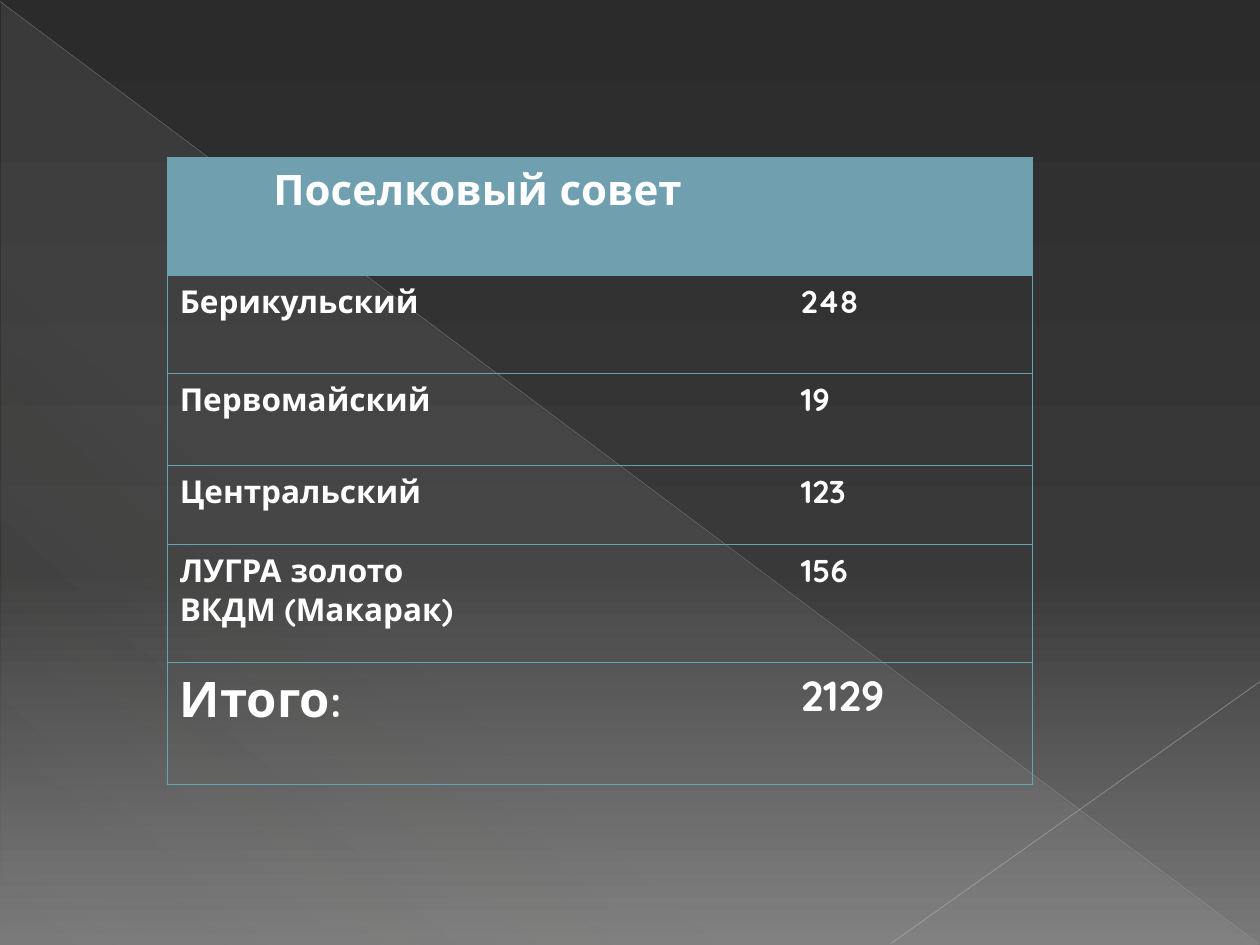
from lxml import etree
from pptx import Presentation
from pptx.dml.color import RGBColor
from pptx.enum.shapes import MSO_CONNECTOR, MSO_SHAPE
from pptx.enum.text import PP_ALIGN
from pptx.oxml import parse_xml
from pptx.oxml.ns import qn
from pptx.util import Cm, Pt

LINE = MSO_CONNECTOR.STRAIGHT
TRIANGLE = MSO_SHAPE.RIGHT_TRIANGLE
CENTER = PP_ALIGN.CENTER

WHITE = RGBColor(0xFF, 0xFF, 0xFF)
TEAL = RGBColor(0x67, 0xA3, 0xB7)
HEAD = RGBColor(0x70, 0xA0, 0xB0)
DARK = RGBColor(0x2B, 0x2B, 0x2B)
COAL = RGBColor(0x39, 0x39, 0x39)
GRAY = RGBColor(0x79, 0x79, 0x79)
SAND = RGBColor(0xD4, 0xD2, 0xD0)
SILVER = RGBColor(0xB7, 0xB7, 0xB7)
PALE = RGBColor(0xBF, 0xBF, 0xBF)

FONT = "Quicksand"
NS = 'xmlns:a="http://schemas.openxmlformats.org/drawingml/2006/main"'
PLAIN = "{2D5ABB26-0587-4C30-8999-92F81FD0307C}"  # table style without grid

COLS = (12.52, 4.93)
# row height, label runs with sizes, value, value size
ROWS = (
    (2.38, [("Поселковый совет", 24)], "", 24),
    (1.98, [("Берикульский", 18)], "248", 18),
    (1.85, [("Первомайский", 18)], "19", 18),
    (1.6, [("Центральский", 18)], "123", 18),
    (2.38, [("ЛУГРА золото\nВКДМ (Макарак)", 18)], "156", 18),
    (2.45, [("Итого", 28), (":", 24)], "2129", 24),
)


def shade(parent, stops, angle):
    """Swap the parent's solid fill for a gradient of (place, colour, alpha)."""
    marks = "".join(
        f'<a:gs pos="{place * 1000}"><a:srgbClr val="{color}">'
        f'<a:alpha val="{alpha * 1000}"/></a:srgbClr></a:gs>'
        for place, color, alpha in stops)
    grad = parse_xml(
        f'<a:gradFill {NS} rotWithShape="1"><a:gsLst>{marks}</a:gsLst>'
        f'<a:lin ang="{angle * 60000}" scaled="0"/></a:gradFill>')
    parent.replace(parent.find(qn("a:solidFill")), grad)


def add_line(slide, start, end, color, width, alpha):
    line = slide.shapes.add_connector(LINE, *map(Cm, start + end))
    line.line.color.rgb = color
    line.line.width = Pt(width)
    props = line._element.spPr
    tint = props.find(".//" + qn("a:srgbClr"))
    etree.SubElement(tint, qn("a:alpha"), val=str(alpha * 1000))
    etree.SubElement(props, qn("a:effectLst"))


def add_back(slide):
    back = slide.background
    back.fill.solid()
    shade(back._cSld.find(".//" + qn("p:bgPr")),
          [(0, DARK, 100), (60, COAL, 100), (100, GRAY, 100)], 90)

    wedge = slide.shapes.add_shape(
        TRIANGLE, Cm(0.03), Cm(0.05), Cm(25.35), Cm(19))
    wedge.shadow.inherit = False
    wedge.line.fill.background()
    wedge.fill.solid()
    shade(wedge._element.spPr,
          [(0, SAND, 10), (70, SAND, 8), (100, SAND, 1)], 133)

    add_line(slide, (0, 0.03), (25.37, 19.02), SILVER, 0.39, 35)
    add_line(slide, (25.4, 13.74), (17.96, 19.02), PALE, 0.47, 45)


def set_edges(cell, sides):
    props = cell._tc.get_or_add_tcPr()
    for spot, side in enumerate(sides):
        props.insert(spot, parse_xml(
            f'<a:ln{side} {NS} w="{Pt(0.75)}"><a:solidFill>'
            f'<a:srgbClr val="{TEAL}"/></a:solidFill></a:ln{side}>'))


def fill_cell(cell, runs):
    para = cell.text_frame.paragraphs[0]
    para.font.name = FONT
    para.font.bold = True
    para.font.color.rgb = WHITE
    para.font.size = Pt(runs[0][1])
    if len(runs) == 1:
        para.text = runs[0][0]
        return para
    for text, size in runs:
        run = para.add_run()
        run.text = text
        run.font.size = Pt(size)
    return para


def add_grid(slide):
    frame = slide.shapes.add_table(
        len(ROWS), len(COLS), Cm(3.37), Cm(3.17),
        Cm(sum(COLS)), Cm(sum(row[0] for row in ROWS)))
    table = frame.table
    table.first_row = table.horz_banding = False
    table._tbl.tblPr.find(qn("a:tableStyleId")).text = PLAIN
    for col, width in zip(table.columns, COLS):
        col.width = Cm(width)

    for r, (height, label, value, size) in enumerate(ROWS):
        table.rows[r].height = Cm(height)
        for c, runs in enumerate((label, [(value, size)])):
            cell = table.cell(r, c)
            para = fill_cell(cell, runs)
            if r == 0:
                para.alignment = CENTER
                cell.fill.solid()
                cell.fill.fore_color.rgb = HEAD
            else:
                cell.fill.background()
            set_edges(cell, ("L" if c == 0 else "R", "T", "B"))


def main():
    deck = Presentation()
    deck.slide_width, deck.slide_height = Cm(25.4), Cm(19.05)
    slide = deck.slides.add_slide(deck.slide_layouts[6])
    add_back(slide)
    add_grid(slide)
    deck.save("out.pptx")


if __name__ == "__main__":
    main()
